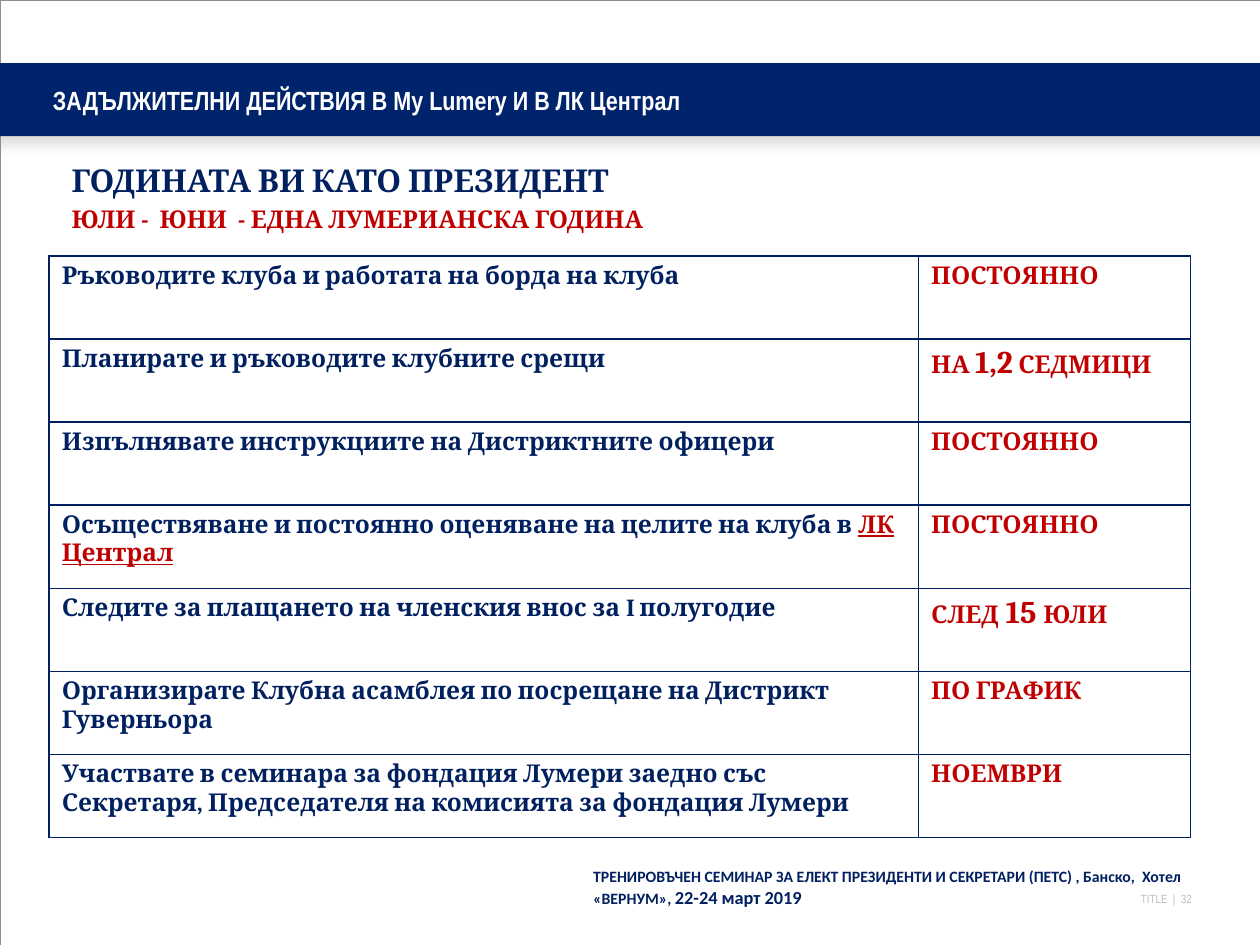
import pptx
import pptx.util
import pptx.dml.color
import pptx.enum.shapes
import pptx.enum.text
import pptx.oxml
import pptx.oxml.ns
from pptx.util import Inches

NAVY, RED, BAND, WHITE = "002060", "C00000", "00246C", "FFFFFF"
FRAME, PALE = "958D85", "BCBDC0"
SERIF, SANS, NARROW = "Cambria", "Calibri", "Arial Narrow"
ALIGN = pptx.enum.text.PP_ALIGN
MIDDLE = pptx.enum.text.MSO_ANCHOR.MIDDLE


def color(value):
    return pptx.dml.color.RGBColor.from_string(value)


def xml(markup):
    declaration = pptx.oxml.ns.nsdecls("a")
    return pptx.oxml.parse_xml(markup.replace(" ", f" {declaration} ", 1))


def write(para, text, size=14, font=SERIF, ink=NAVY, bold=True, underline=False):
    span = para.add_run()
    span.text = text
    span.font.size = pptx.util.Pt(size)
    span.font.name = font
    span.font.bold = bold
    if underline:
        span.font.underline = True
    span.font.color.rgb = color(ink)


class SlideBuilder:
    """Holds the deck's style and the current slide."""

    border_width = pptx.util.Pt(1)

    def __init__(self, deck):
        self.page = deck.slides.add_slide(deck.slide_layouts[5])

    def rectangle(self, left, top, width, height, fill=None, line=None, shadow=False):
        box = self.page.shapes.add_shape(
            pptx.enum.shapes.MSO_SHAPE.RECTANGLE,
            Inches(left), Inches(top), Inches(width), Inches(height))
        box.shadow.inherit = False
        if fill:
            box.fill.solid()
            box.fill.fore_color.rgb = color(fill)
        else:
            box.fill.background()
        if line:
            box.line.color.rgb = color(line)
            box.line.width = pptx.util.Pt(0.13)
        else:
            box.line.fill.background()
        if shadow:
            effects = box.element.spPr.find(pptx.oxml.ns.qn("a:effectLst"))
            effects.append(xml(
                f'<a:outerShdw blurRad="{pptx.util.Pt(7)}" dist="{pptx.util.Pt(4.8)}" '
                'dir="5400000" rotWithShape="0"><a:srgbClr val="808080">'
                '<a:alpha val="25000"/></a:srgbClr></a:outerShdw>'))

    def title(self, text, left, top, width, height):
        box = self.page.shapes.title
        box.left, box.top = Inches(left), Inches(top)
        box.width, box.height = Inches(width), Inches(height)
        frame = box.text_frame
        self.clear_margins(frame)
        frame.auto_size = pptx.enum.text.MSO_AUTO_SIZE.NONE
        frame.vertical_anchor = MIDDLE
        frame.paragraphs[0].alignment = ALIGN.LEFT
        write(frame.paragraphs[0], text, size=15, font=NARROW, ink=WHITE)
        # Bring the title in front of the band
        box.element.getparent().append(box.element)

    def text(self, left, top, width, height, margins=True):
        box = self.page.shapes.add_textbox(
            Inches(left), Inches(top), Inches(width), Inches(height))
        box.text_frame.word_wrap = True
        if not margins:
            self.clear_margins(box.text_frame)
        return box.text_frame

    def clear_margins(self, frame):
        frame.margin_left = frame.margin_right = 0
        frame.margin_top = frame.margin_bottom = 0

    def table(self, rows, left, top, widths, row_height):
        box = self.page.shapes.add_table(
            len(rows), len(widths), Inches(left), Inches(top),
            Inches(sum(widths)), Inches(row_height * len(rows)))
        table = box.table
        table.first_row = table.horz_banding = False
        for column, width in zip(table.columns, widths):
            column.width = Inches(width)
        for row, texts in zip(table.rows, rows):
            row.height = Inches(row_height)
            for cell, spans, ink in zip(row.cells, texts, (NAVY, RED)):
                self.cell(cell, spans, ink)

    def cell(self, cell, spans, ink):
        properties = cell._tc.get_or_add_tcPr()
        for side in "LRTB":
            properties.append(xml(
                f'<a:ln{side} w="{self.border_width}"><a:solidFill>'
                f'<a:srgbClr val="{NAVY}"/></a:solidFill></a:ln{side}>'))
        cell.fill.background()
        for text, style in spans:
            write(cell.text_frame.paragraphs[0], text, **{"ink": ink, **style})


def plain(text):
    return [(text, {})]


LARGE = {"size": 18}
ALWAYS = plain("ПОСТОЯННО")
DUTIES = [
    (plain("Ръководите клуба и работата на борда на клуба"), ALWAYS),
    (plain("Планирате и ръководите клубните срещи"),
     [("НА ", {}), ("1,2", LARGE), (" СЕДМИЦИ", {})]),
    (plain("Изпълнявате инструкциите на Дистриктните офицери"), ALWAYS),
    ([("Осъществяване и постоянно оценяване на целите на клуба в ", {}),
      ("ЛК Централ", {"ink": RED, "underline": True})], ALWAYS),
    (plain("Следите за плащането на членския внос за I полугодие"),
     [("СЛЕД", {}), (" 15 ", LARGE), ("ЮЛИ", {})]),
    (plain("Организирате Клубна асамблея по посрещане на Дистрикт Гуверньора"),
     plain("ПО ГРАФИК")),
    (plain("Участвате в семинара за фондация Лумери заедно със "
           "Секретаря, Председателя на комисията за фондация Лумери"),
     plain("НОЕМВРИ")),
]


def main():
    deck = pptx.Presentation()
    deck.slide_width, deck.slide_height = Inches(10), Inches(7.5)
    slide = SlideBuilder(deck)

    # Footer: page mark and event
    mark = slide.text(7.75, 7.08, 1.71, 0.11, margins=False).paragraphs[0]
    mark.alignment = ALIGN.RIGHT
    write(mark, "TITLE  |  32", size=6.8, font=NARROW, ink=PALE, bold=False)
    event = slide.text(4.61, 6.83, 5.37, 0.43).paragraphs[0]
    write(event, "ТРЕНИРОВЪЧЕН СЕМИНАР ЗА ЕЛЕКТ ПРЕЗИДЕНТИ И СЕКРЕТАРИ (ПЕТС) , "
                 "Банско,  Хотел «ВЕРНУМ», ", size=9, font=SANS)
    write(event, "22-24 март 2019", size=10.5, font=SANS)

    # Page frame, title band and title
    slide.rectangle(0, 0, 10, 7.5, line=FRAME)
    slide.rectangle(-0.08, 0.5, 10.17, 0.58, fill=BAND, shadow=True)
    slide.title("ЗАДЪЛЖИТЕЛНИ ДЕЙСТВИЯ В My Lumery И В ЛК Централ",
                0.42, 0.5, 9.58, 0.58)

    # Heading with the term of office
    heading = slide.text(0.47, 1.23, 6.88, 0.8)
    write(heading.paragraphs[0], "ГОДИНАТА ВИ КАТО ПРЕЗИДЕНТ", size=18)
    term = heading.add_paragraph()
    term.space_before = pptx.util.Pt(3)
    write(term, "ЮЛИ -  ЮНИ  - ЕДНА ЛУМЕРИАНСКА ГОДИНА", ink=RED)

    # Duties and their dates
    slide.table(DUTIES, 0.39, 2.03, (6.9, 2.16), 0.66)

    deck.save("out.pptx")


if __name__ == "__main__":
    main()
